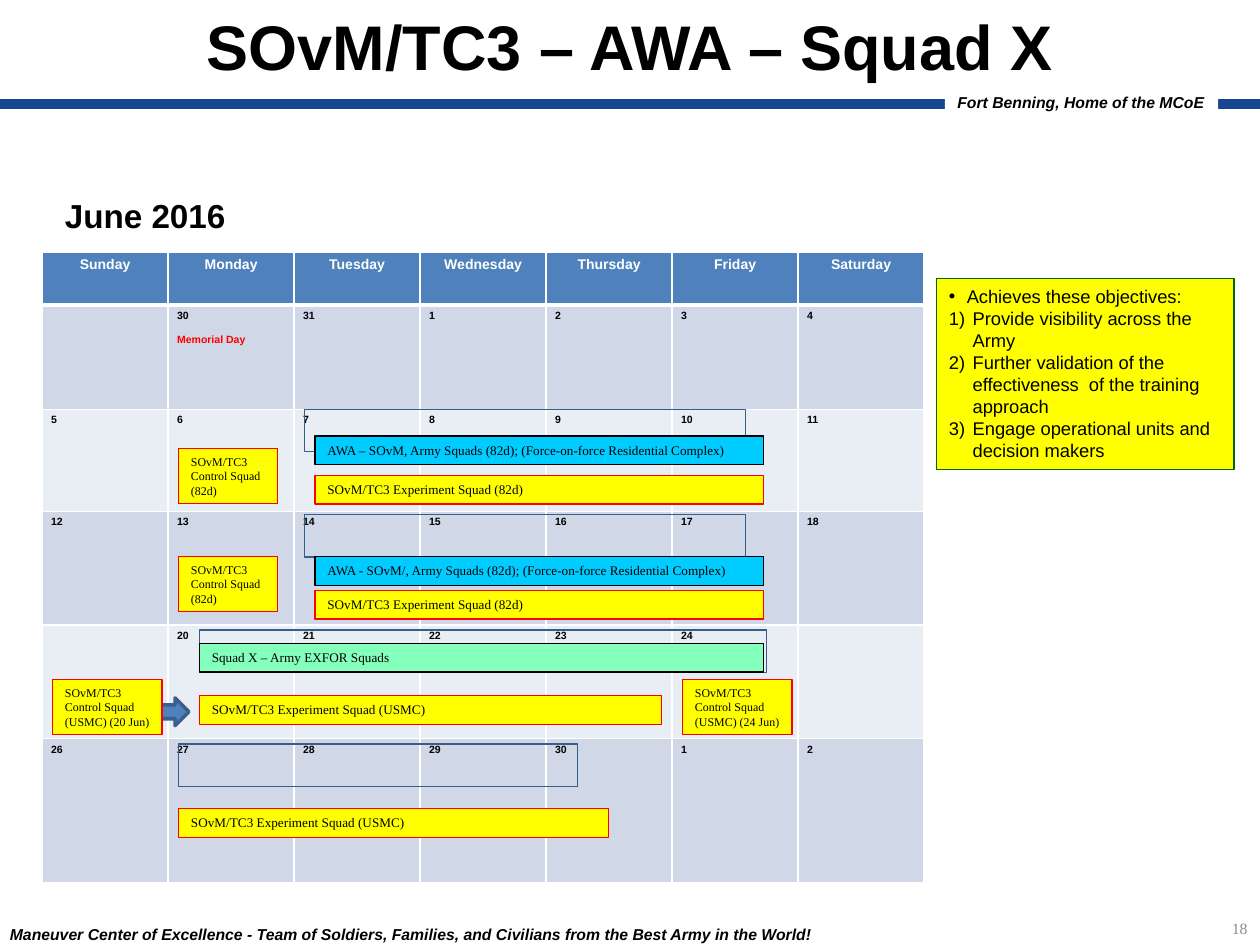
from dataclasses import dataclass

from lxml.etree import SubElement
from pptx import Presentation
from pptx.dml.color import RGBColor
from pptx.enum.shapes import MSO_CONNECTOR, MSO_SHAPE
from pptx.enum.text import MSO_ANCHOR, PP_ALIGN
from pptx.oxml.ns import qn
from pptx.util import Cm, Pt


@dataclass(frozen=True)
class Theme:
    sans: str = "Arial"
    serif: str = "Times New Roman"
    black: str = "000000"
    white: str = "FFFFFF"
    red: str = "FF0000"
    yellow: str = "FFFF00"
    cyan: str = "00CCFF"
    mint: str = "85FFBC"
    green: str = "006600"
    gray: str = "8C8C8C"
    banner: str = "164592"
    header: str = "4F81BD"
    outline: str = "385D89"
    arrow_line: str = "3A5F8C"
    bands: tuple = ("D0D8E8", "E9EDF4")
    title_size: float = 36
    month_size: float = 19
    list_size: float = 10.5
    caption_size: float = 9
    weekday_size: float = 8
    bar_size: float = 7.5
    squad_size: float = 6.8
    day_size: float = 6


THEME = Theme()
WEEKDAYS = ["Sunday", "Monday", "Tuesday", "Wednesday", "Thursday", "Friday", "Saturday"]
WEEKS = [
    ["", "30", "31", "1", "2", "3", "4"],
    ["5", "6", "7", "8", "9", "10", "11"],
    ["12", "13", "14", "15", "16", "17", "18"],
    ["", "20", "21", "22", "23", "24", ""],
    ["26", "27", "28", "29", "30", "1", "2"],
]
ROW_HEIGHTS = [1.07, 2.1, 2.06, 2.29, 2.29, 2.9]
OUTLINES = [(6.14, 8.25, 8.89), (6.14, 10.37, 8.89), (4.02, 12.7, 11.43), (3.6, 15, 8.05)]
ARMY_BARS = [
    (6.35, 8.79, 9.04, "AWA – SOvM, Army Squads (82d); (Force-on-force Residential Complex)", THEME.cyan),
    (6.35, 11.22, 9.04, "AWA - SOvM/, Army Squads (82d); (Force-on-force Residential Complex)", THEME.cyan),
    (4.02, 12.97, 11.38, "Squad X – Army EXFOR Squads", THEME.mint),
]
EXPERIMENT_BARS = [
    (6.35, 9.58, 9.04, "82d"),
    (6.35, 11.9, 9.04, "82d"),
    (4.02, 14.02, 9.32, "USMC"),
    (3.6, 16.3, 8.67, "USMC"),
]
CONTROL_SQUADS = [
    (3.6, 9.04, 2, "(82d)"),
    (3.6, 11.22, 2, "(82d)"),
    (1.06, 13.7, 2.21, "(USMC) (20 Jun)"),
    (13.76, 13.7, 2.21, "(USMC) (24 Jun)"),
]
OBJECTIVES = [
    "Achieves these objectives:",
    "Provide visibility across the Army",
    "Further validation of the effectiveness  of the training approach",
    "Engage operational units and decision makers",
]


def color(value):
    return RGBColor.from_string(value)


def format_para(para, size, font=THEME.sans, ink=THEME.black, bold=False, italic=False):
    for span in para.runs:
        span.font.size = Pt(size)
        span.font.name = font
        span.font.color.rgb = color(ink)
        span.font.bold = bold
        span.font.italic = italic


def add_text(page, place, text, size, align=PP_ALIGN.LEFT, **style):
    box = page.shapes.add_textbox(*map(Cm, place))
    box.text_frame.word_wrap = True
    box.text_frame.text = text
    para = box.text_frame.paragraphs[0]
    para.alignment = align
    format_para(para, size, **style)
    return box


def add_block(page, place, fill=None, line=None, width=0.75, kind=MSO_SHAPE.RECTANGLE):
    block = page.shapes.add_shape(kind, *map(Cm, place))
    block.shadow.inherit = False
    if fill:
        block.fill.solid()
        block.fill.fore_color.rgb = color(fill)
    else:
        block.fill.background()
    if line:
        block.line.color.rgb = color(line)
        block.line.width = Pt(width)
    else:
        block.line.fill.background()
    return block


def add_label(page, place, text, size, fill, line=None, font=THEME.serif, **style):
    block = add_block(page, place, fill, line)
    frame = block.text_frame
    frame.word_wrap = True
    frame.vertical_anchor = MSO_ANCHOR.TOP
    frame.text = text
    for para in frame.paragraphs:
        para.alignment = PP_ALIGN.LEFT
        format_para(para, size, font, **style)
    return block


def add_banner(page):
    rule = page.shapes.add_connector(MSO_CONNECTOR.STRAIGHT, Cm(0), Cm(2.1), Cm(25.4), Cm(2.1))
    rule.line.color.rgb = color(THEME.banner)
    rule.line.width = Pt(6)
    SubElement(rule._element.spPr, qn("a:effectLst"))
    label = add_label(page, (19.05, 1.75, 5.51, 0.56), "Fort Benning, Home of the MCoE",
                      THEME.caption_size, THEME.white, font=THEME.sans, bold=True, italic=True)
    frame = label.text_frame
    frame.margin_left, frame.margin_top = Cm(0.25), Cm(0.13)
    frame.margin_right = frame.margin_bottom = 0


def set_borders(cell, bottom_width):
    properties = cell._tc.get_or_add_tcPr()
    for position, side in enumerate(("lnL", "lnR", "lnT", "lnB")):
        width = bottom_width if side == "lnB" else 1
        edge = properties.makeelement(qn(f"a:{side}"), {"w": str(Pt(width))})
        fill = SubElement(edge, qn("a:solidFill"))
        SubElement(fill, qn("a:srgbClr"), val=THEME.white)
        properties.insert(position, edge)


def fill_cell(cell, text, fill, size, ink, align, bottom_width=1):
    cell.fill.solid()
    cell.fill.fore_color.rgb = color(fill)
    cell.margin_left = cell.margin_right = Cm(0.18)
    cell.margin_top = cell.margin_bottom = Cm(0.1)
    set_borders(cell, bottom_width)
    if text:
        cell.text_frame.text = text
        para = cell.text_frame.paragraphs[0]
        para.alignment = align
        format_para(para, size, ink=ink, bold=True)


def add_calendar(page):
    frame = page.shapes.add_table(len(WEEKS) + 1, len(WEEKDAYS), Cm(0.85), Cm(5.08),
                                  Cm(17.78), Cm(sum(ROW_HEIGHTS)))
    table = frame.table
    for column in table.columns:
        column.width = Cm(2.54)
    for row, height in zip(table.rows, ROW_HEIGHTS):
        row.height = Cm(height)
    for column, name in enumerate(WEEKDAYS):
        fill_cell(table.cell(0, column), name, THEME.header, THEME.weekday_size,
                  THEME.white, PP_ALIGN.CENTER, bottom_width=3)
    for row, week in enumerate(WEEKS):
        for column, day in enumerate(week):
            fill_cell(table.cell(row + 1, column), day, THEME.bands[row % 2],
                      THEME.day_size, THEME.black, PP_ALIGN.LEFT)
    holiday = table.cell(1, 1).text_frame.add_paragraph()
    holiday.text = "Memorial Day"
    holiday.space_before = Pt(7)
    format_para(holiday, THEME.day_size, ink=THEME.red, bold=True)


def add_objectives(page):
    block = add_label(page, (18.88, 5.62, 6, 3.84), "\n".join(OBJECTIVES), THEME.list_size,
                      THEME.yellow, THEME.green, font=THEME.sans)
    for index, para in enumerate(block.text_frame.paragraphs):
        properties = para._p.get_or_add_pPr()
        indent = Cm(0.48 if index else 0.36)
        properties.set("marL", str(indent))
        properties.set("indent", str(-indent))
        if index:
            SubElement(properties, qn("a:buAutoNum"), type="arabicParenR")
        else:
            SubElement(properties, qn("a:buFont"), typeface=THEME.sans)
            SubElement(properties, qn("a:buChar"), char="•")


def add_events(page):
    for left, top, width in OUTLINES:
        add_block(page, (left, top, width, 0.86), line=THEME.outline)
    for left, top, width, unit in EXPERIMENT_BARS:
        add_label(page, (left, top, width, 0.58), f"SOvM/TC3 Experiment Squad ({unit})",
                  THEME.bar_size, THEME.yellow, THEME.red)
    for left, top, width, text, fill in ARMY_BARS:
        add_label(page, (left, top, width, 0.58), text, THEME.bar_size, fill, THEME.black)
    add_block(page, (2.97, 14.07, 0.84, 0.56), THEME.header, THEME.arrow_line, 2, MSO_SHAPE.RIGHT_ARROW)
    for left, top, width, unit in CONTROL_SQUADS:
        add_label(page, (left, top, width, 1.11), f"SOvM/TC3 Control Squad {unit}",
                  THEME.squad_size, THEME.yellow, THEME.red)


def main():
    deck = Presentation()
    deck.slide_width, deck.slide_height = Cm(25.4), Cm(19.05)
    page = deck.slides.add_slide(deck.slide_layouts[6])
    add_banner(page)
    add_text(page, (-0.05, 18.52, 18.67, 0.66),
             "Maneuver Center of Excellence - Team of Soldiers, Families, and Civilians "
             "from the Best Army in the World!", THEME.caption_size, bold=True, italic=True)
    add_calendar(page)
    add_text(page, (1.69, 0.03, 22.02, 1.8), "SOvM/TC3 – AWA – Squad X",
             THEME.title_size, PP_ALIGN.CENTER, bold=True)
    add_text(page, (1.06, 3.81, 4.24, 1.07), "June 2016", THEME.month_size, bold=True)
    add_events(page)
    add_objectives(page)
    number = add_text(page, (19.48, 18.39, 5.92, 0.64), "18", THEME.caption_size,
                      PP_ALIGN.RIGHT, font=THEME.serif, ink=THEME.gray)
    number.text_frame.vertical_anchor = MSO_ANCHOR.MIDDLE
    deck.save("out.pptx")


if __name__ == "__main__":
    main()
